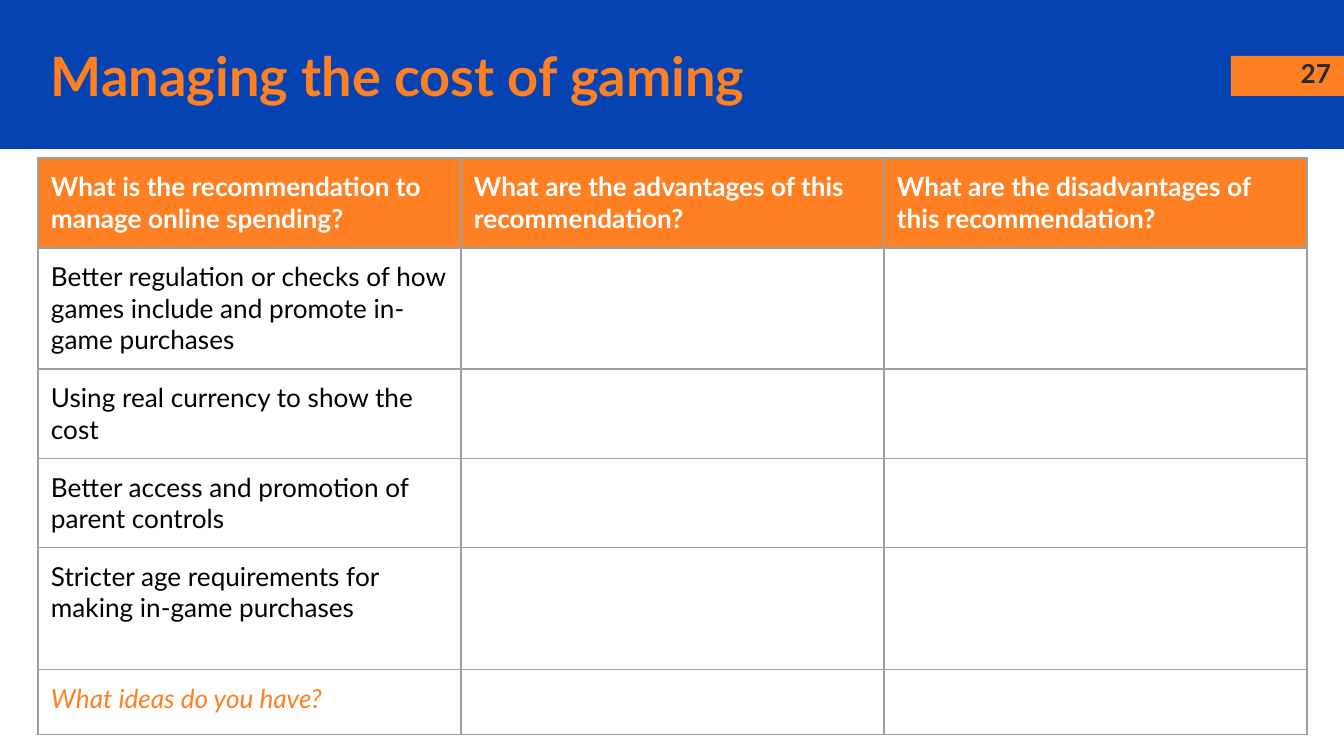
from lxml import etree
from pptx import Presentation
from pptx.dml.color import RGBColor
from pptx.enum.shapes import MSO_SHAPE
from pptx.enum.text import MSO_ANCHOR, PP_ALIGN
from pptx.oxml.ns import qn
from pptx.util import Emu, Pt

EMU_PER_PX = 914400 / 134.4
RECTANGLE = MSO_SHAPE.RECTANGLE
TOP, MIDDLE = MSO_ANCHOR.TOP, MSO_ANCHOR.MIDDLE
LEFT, RIGHT = PP_ALIGN.LEFT, PP_ALIGN.RIGHT

COLORS = {
    "blue": "0543B3",
    "orange": "FF8022",
    "ink": "262A33",
    "black": "000000",
    "white": "FFFFFF",
    "border": "9E9E9E",
}
FONT = "Lato"
INSET = 13
BORDER_WIDTH = Pt(0.75)
SIDES = ("left", "top", "right", "bottom")

HEADER_FORMAT = {"size": Pt(14), "bold": True, "color": "white"}
BODY_FORMAT = {"size": Pt(14), "bold": False, "color": "black"}
PROMPT_FORMAT = {"size": Pt(14), "bold": False, "italic": True, "color": "orange"}

QUESTIONS = [
    "What is the recommendation to manage online spending?",
    "What are the advantages of this recommendation?",
    "What are the disadvantages of this recommendation?",
]
RECOMMENDATIONS = [
    "Better regulation or checks of how games include and promote in-game purchases",
    "Using real currency to show the cost",
    "Better access and promotion of parent controls",
    "Stricter age requirements for making in-game purchases",
]
PROMPT = "What ideas do you have?"
COLUMN_WIDTH = 423
ROW_HEIGHTS = [90, 121, 90, 89, 122, 65]


def px(length):
    return Emu(round(length * EMU_PER_PX))


def rgb(name):
    return RGBColor.from_string(COLORS[name])


class SlideBuilder:
    def __init__(self, presentation):
        self.slide = presentation.slides.add_slide(presentation.slide_layouts[6])

    def rectangle(self, left, top, width, height, color):
        shape = self.slide.shapes.add_shape(
            RECTANGLE, px(left), px(top), px(width), px(height))
        shape.shadow.inherit = False
        shape.fill.solid()
        shape.fill.fore_color.rgb = rgb(color)
        shape.line.fill.background()

    def fill_paragraph(self, paragraph, text, font_format):
        """Add the text as a run, or format the paragraph itself when empty."""
        target = paragraph
        if text:
            target = paragraph.add_run()
            target.text = text
        target.font.name = FONT
        for name, value in font_format.items():
            if name == "color":
                target.font.color.rgb = rgb(value)
            else:
                setattr(target.font, name, value)

    def text(self, left, top, width, height, text, font_format, align=LEFT, anchor=TOP):
        box = self.slide.shapes.add_textbox(px(left), px(top), px(width), px(height))
        frame = box.text_frame
        frame.word_wrap = True
        frame.vertical_anchor = anchor
        for side in SIDES:
            setattr(frame, f"margin_{side}", px(INSET))
        frame.paragraphs[0].alignment = align
        self.fill_paragraph(frame.paragraphs[0], text, font_format)

    def cell(self, cell, text, font_format, fill):
        for side in SIDES:
            setattr(cell, f"margin_{side}", px(INSET))
        self.fill_paragraph(cell.text_frame.paragraphs[0], text, font_format)
        properties = cell._tc.get_or_add_tcPr()
        for tag in ("a:lnL", "a:lnR", "a:lnT", "a:lnB"):
            line = etree.SubElement(properties, qn(tag), w=str(int(BORDER_WIDTH)))
            solid = etree.SubElement(line, qn("a:solidFill"))
            etree.SubElement(solid, qn("a:srgbClr"), val=COLORS["border"])
        cell.fill.solid()
        cell.fill.fore_color.rgb = rgb(fill)

    def table(self, left, top, column_width, row_heights, rows):
        """Draw rows given as (cell texts, font format, fill name)."""
        column_count = len(rows[0][0])
        table = self.slide.shapes.add_table(
            len(rows), column_count, px(left), px(top),
            px(column_width * column_count), px(sum(row_heights))).table
        for column in table.columns:
            column.width = px(column_width)
        for row, height, (texts, font_format, fill) in zip(table.rows, row_heights, rows):
            row.height = px(height)
            for cell, text in zip(row.cells, texts):
                self.cell(cell, text, font_format, fill)


def main():
    presentation = Presentation()
    presentation.slide_width, presentation.slide_height = px(1344), px(756)
    builder = SlideBuilder(presentation)

    builder.rectangle(0, 0, 1344, 149, "blue")
    builder.rectangle(1231, 56, 113, 40, "orange")
    builder.text(1263, 44, 81, 58, "27",
                 {"size": Pt(14), "bold": True, "color": "ink"}, align=RIGHT)
    builder.text(38, 37, 1137, 75, "Managing the cost of gaming",
                 {"size": Pt(29), "bold": True, "color": "orange"}, anchor=MIDDLE)

    rows = [(QUESTIONS, HEADER_FORMAT, "orange")]
    rows += [([text, "", ""], BODY_FORMAT, "white") for text in RECOMMENDATIONS]
    rows.append(([PROMPT, "", ""], PROMPT_FORMAT, "white"))
    builder.table(38, 158, COLUMN_WIDTH, ROW_HEIGHTS, rows)

    presentation.save("out.pptx")


if __name__ == "__main__":
    main()
